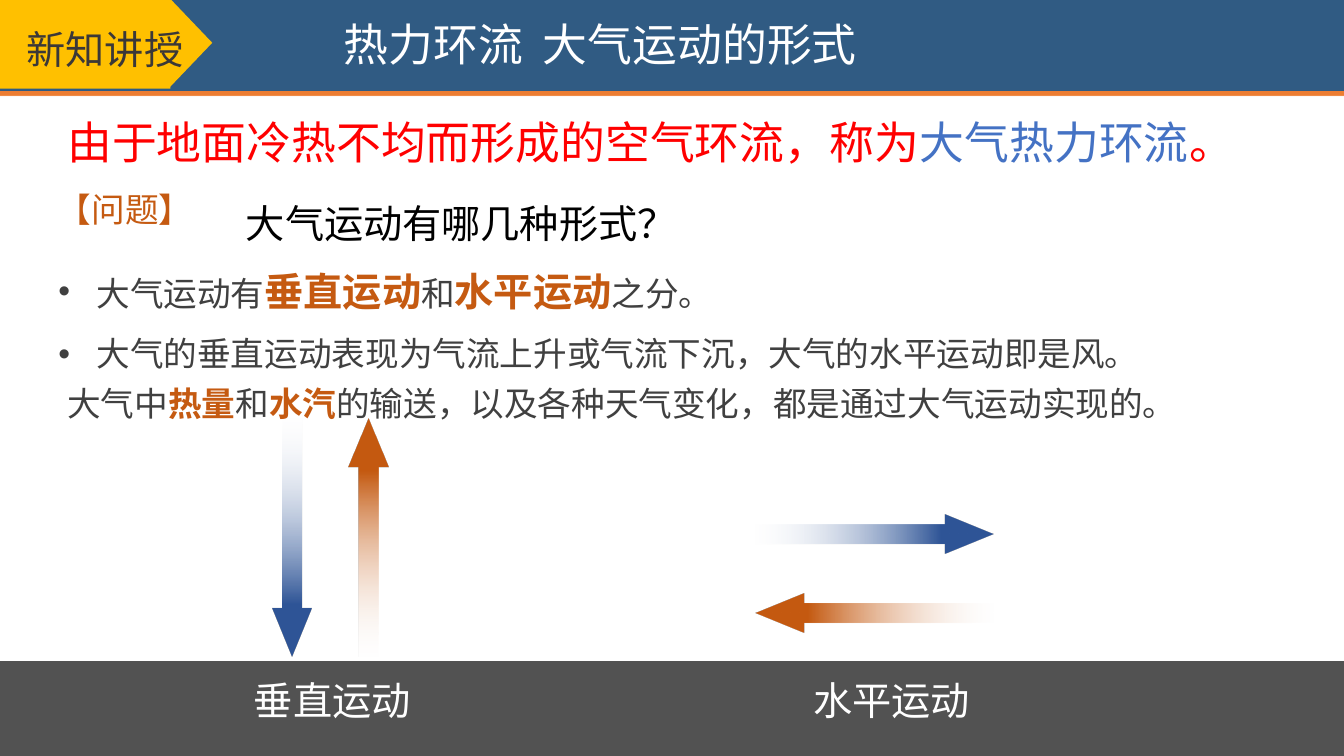
from pptx import Presentation
from pptx.dml.color import RGBColor
from pptx.enum.shapes import MSO_CONNECTOR, MSO_SHAPE
from pptx.enum.text import MSO_AUTO_SIZE, PP_ALIGN
from pptx.oxml.ns import qn
from pptx.util import Inches, Pt
from lxml import etree

RECTANGLE = MSO_SHAPE.RECTANGLE
TRIANGLE = MSO_SHAPE.ISOSCELES_TRIANGLE
DOWN_ARROW = MSO_SHAPE.DOWN_ARROW
STRAIGHT = MSO_CONNECTOR.STRAIGHT
LEFT, CENTER, JUSTIFY = PP_ALIGN.LEFT, PP_ALIGN.CENTER, PP_ALIGN.JUSTIFY
FIT_SHAPE = MSO_AUTO_SIZE.SHAPE_TO_FIT_TEXT

WHITE = RGBColor(0xFF, 0xFF, 0xFF)
BLACK = RGBColor(0x00, 0x00, 0x00)
NAVY = RGBColor(0x1F, 0x4E, 0x79)
ORANGE = RGBColor(0xED, 0x7D, 0x31)
RUST = RGBColor(0xC5, 0x5A, 0x11)
BLUE = RGBColor(0x2F, 0x55, 0x97)
LIGHT_BLUE = RGBColor(0x44, 0x72, 0xC4)
GOLD = RGBColor(0xFF, 0xC0, 0x00)
RED = RGBColor(0xFF, 0x00, 0x00)
FOOTER_GRAY = RGBColor(0x52, 0x52, 0x52)
TEXT_GRAY = RGBColor(0x40, 0x40, 0x40)
TAB_GRAY = RGBColor(0x3B, 0x38, 0x38)
CJK = "Noto Sans CJK SC"

presentation = Presentation()
presentation.slide_width = Inches(13.33)
presentation.slide_height = Inches(7.5)
slide = presentation.slides.add_slide(presentation.slide_layouts[6])


def add_block(kind, box, color, opacity=100, rotation=0):
    shape = slide.shapes.add_shape(kind, *[Inches(value) for value in box])
    shape.shadow.inherit = False
    shape.line.fill.background()
    shape.rotation = rotation
    shape.fill.solid()
    shape.fill.fore_color.rgb = color
    if opacity < 100:
        color_element = shape.fill._xPr.find(".//" + qn("a:srgbClr"))
        etree.SubElement(color_element, qn("a:alpha"), val=str(opacity * 1000))
    return shape


def add_text(box, paragraphs, align=LEFT, font=CJK, spacing=None, bullet=False, wrap=True):
    frame = slide.shapes.add_textbox(*[Inches(value) for value in box]).text_frame
    frame.word_wrap = wrap
    frame.auto_size = FIT_SHAPE
    for index, runs in enumerate(paragraphs):
        paragraph = frame.add_paragraph() if index else frame.paragraphs[0]
        paragraph.alignment = align
        if spacing:
            paragraph.line_spacing = spacing
        if bullet:
            paragraph.space_after = Pt(6)
            properties = paragraph._p.get_or_add_pPr()
            properties.set("marL", str(Inches(0.38)))
            properties.set("indent", str(Inches(-0.38)))
            etree.SubElement(properties, qn("a:buFont"), typeface="Arial")
            etree.SubElement(properties, qn("a:buChar"), char="•")
        for text, size, color, bold in runs:
            run = paragraph.add_run()
            run.text = text
            run.font.size = Pt(size)
            run.font.bold = bold
            run.font.color.rgb = color
            run.font.name = font
            etree.SubElement(run._r.get_or_add_rPr(), qn("a:ea"), typeface=CJK)


add_block(RECTANGLE, (0, 0, 13.33, 0.93), NAVY, 92)
header_rule = slide.shapes.add_connector(STRAIGHT, 0, Inches(0.93), Inches(13.33), Inches(0.93))
header_rule.line.color.rgb = ORANGE
header_rule.line.width = Pt(4.25)
etree.SubElement(header_rule._element.spPr, qn("a:effectLst"))
add_block(RECTANGLE, (0, 0.95, 13.33, 6.55), WHITE, 95)
add_block(RECTANGLE, (0, 6.56, 13.33, 0.94), FOOTER_GRAY)

add_text((2.34, 1.79, 6.51, 1.27), [[("大气运动有哪几种形式？", 28, BLACK, False)]], spacing=1.3)
add_text((0, 1.83, 2.48, 0.5), [[("【问题】", 24, RUST, False)]], CENTER)
add_text((3.31, 0.12, 7.26, 0.64), [[("热力环流  大气运动的形式", 32, WHITE, False)]])
add_text((0.48, 2.49, 12.36, 1.21), [
    [
        ("大气运动有", 24, TEXT_GRAY, False),
        ("垂直运动", 28, RUST, True),
        ("和", 24, TEXT_GRAY, False),
        ("水平运动", 28, RUST, True),
        ("之分。", 24, TEXT_GRAY, False),
    ],
    [("大气的垂直运动表现为气流上升或气流下沉，大气的水平运动即是风。", 24, TEXT_GRAY, False)],
], JUSTIFY, spacing=1.25, bullet=True)

for left, top, rotation, color in (
    (3.46, 4.15, 180, RUST),
    (2.7, 4.15, 0, BLUE),
    (8.48, 4.9, 90, RUST),
    (8.48, 4.12, 270, BLUE),
):
    arrow = add_block(DOWN_ARROW, (left, top, 0.39, 2.36), color, rotation=rotation)
    arrow.adjustments[0] = 0.5
    arrow.adjustments[1] = 1.243
    arrow.fill.gradient()
    arrow.fill.gradient_angle = 270
    tail, head = arrow.fill.gradient_stops
    tail.color.rgb, tail.position = WHITE, 0
    head.color.rgb, head.position = color, 0.78
    tail_color = arrow.fill._xPr.find(".//" + qn("a:srgbClr"))
    etree.SubElement(tail_color, qn("a:alpha"), val="10000")

for left, label in ((2.42, "垂直运动"), (7.97, "水平运动")):
    add_text((left, 6.66, 1.77, 0.57), [[(label, 28, WHITE, False)]], font="Arial", wrap=False)

add_block(RECTANGLE, (-0.01, -0.02, 1.7, 0.9), GOLD)
add_block(TRIANGLE, (1.44, 0.21, 0.9, 0.43), GOLD, rotation=90)
add_text((-0.01, 0.2, 2.1, 0.57), [[("新知讲授", 28, TAB_GRAY, False)]], CENTER)

add_text((0.57, 3.75, 11.25, 0.5), [[
    ("大气中", 24, TEXT_GRAY, False),
    ("热量", 24, RUST, True),
    ("和", 24, TEXT_GRAY, False),
    ("水汽", 24, RUST, True),
    ("的输送，以及各种天气变化，都是通过大气运动实现的。", 24, TEXT_GRAY, False),
]])
add_text((0.57, 1.09, 11.56, 0.64), [[
    ("由于地面冷热不均而形成的空气环流，称为", 32, RED, False),
    ("大气热力环流", 32, LIGHT_BLUE, False),
    ("。", 32, RED, False),
]])

presentation.save("out.pptx")
